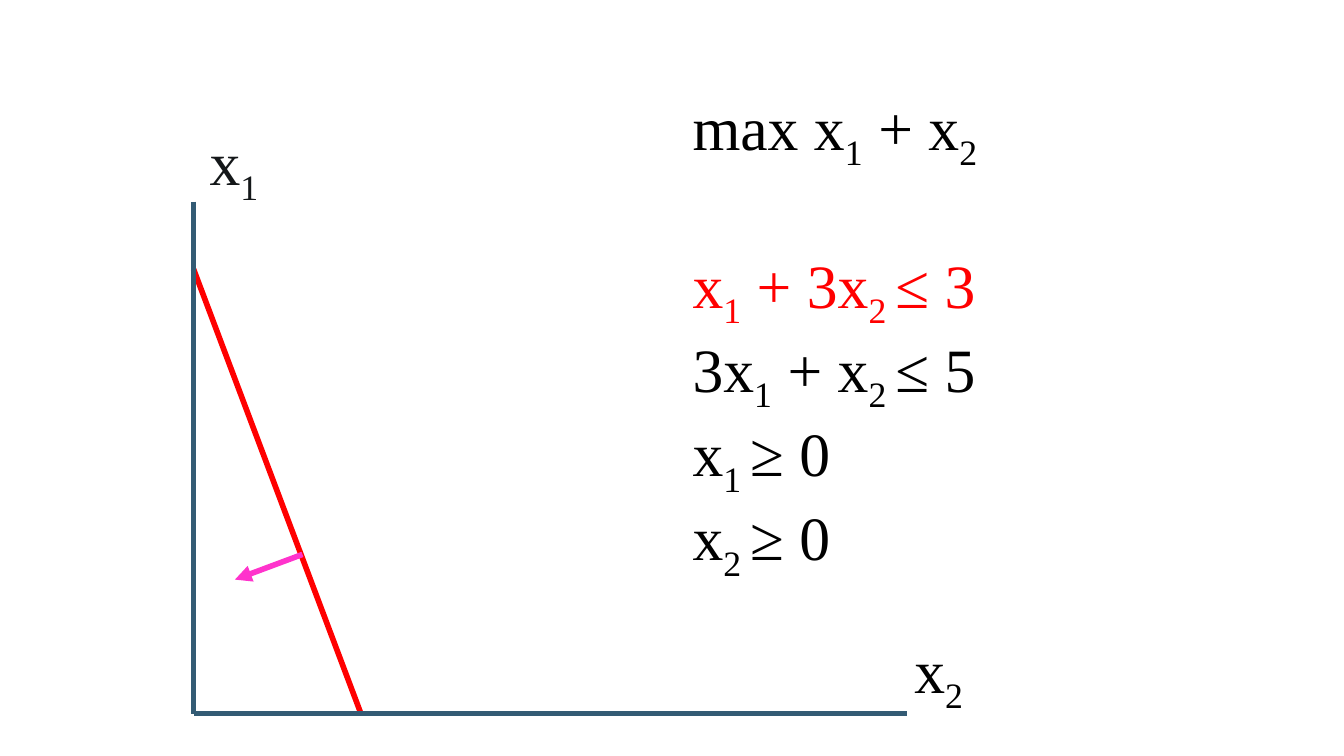
from lxml import etree
from pptx import Presentation
from pptx.dml.color import RGBColor
from pptx.enum.shapes import MSO_CONNECTOR
from pptx.enum.text import MSO_AUTO_SIZE, PP_ALIGN
from pptx.oxml.ns import qn
from pptx.util import Inches, Pt

BLACK = RGBColor(0x00, 0x00, 0x00)
CHARCOAL = RGBColor(0x14, 0x17, 0x19)
RED = RGBColor(0xFF, 0x00, 0x00)
PINK = RGBColor(0xFF, 0x33, 0xCC)
TEAL = RGBColor(0x33, 0x5B, 0x74)

FONT = "Times New Roman"
GROUP_GAP = 53  # points between the objective and its constraints

# Formula, colour, space before; the parts between bars alternate with subscripts
PROGRAM = [
    ("max x|1| + x|2", BLACK, 0),
    ("x|1| + 3x|2 |≤ 3", RED, GROUP_GAP),
    ("3x|1| + x|2 |≤ 5", BLACK, 0),
    ("x|1 |≥ 0", BLACK, 0),
    ("x|2 |≥ 0", BLACK, 0),
]


def add_formula(p, formula, color):
    """Write a formula whose every second part, split at the bars, is a subscript."""
    for i, part in enumerate(formula.split("|")):
        r = p.add_run()
        r.text = part
        for name, value in {"name": FONT, "size": Pt(44)}.items():
            setattr(r.font, name, value)
        r.font.color.rgb = color
        if i % 2:
            r._r.get_or_add_rPr().set("baseline", "-25000")


def add_formulas(s, left, top, width, height, lines):
    tf = s.shapes.add_textbox(
        Inches(left), Inches(top), Inches(width), Inches(height)).text_frame
    tf.word_wrap = False
    tf.auto_size = MSO_AUTO_SIZE.SHAPE_TO_FIT_TEXT
    for i, (formula, color, gap) in enumerate(lines):
        p = tf.add_paragraph() if i else tf.paragraphs[0]
        p.alignment = PP_ALIGN.LEFT
        if gap:
            p.space_before = Pt(gap)
        add_formula(p, formula, color)


def add_line(s, start, end, color, arrow=False):
    line = s.shapes.add_connector(
        MSO_CONNECTOR.STRAIGHT, *(Inches(v) for v in (*start, *end)))
    line.line.color.rgb = color
    line.line.width = Pt(4)
    if arrow:
        etree.SubElement(line.line._get_or_add_ln(), qn("a:tailEnd"), type="triangle")
    etree.SubElement(line._element.spPr, qn("a:effectLst"))


def add_graph(s, left, top, width, height):
    """Draw the axes along the left and bottom of the box, and the first constraint."""
    right, bottom = left + width, top + height
    origin = (left, bottom)
    add_formulas(s, left + 0.06, top - 0.82, 0.73, 0.84, [("x|1", CHARCOAL, 0)])
    add_formulas(s, right - 0.03, bottom - 0.86, 0.73, 0.84, [("x|2", BLACK, 0)])
    add_line(s, (left, top + 0.67), (left + 1.66, bottom), RED)
    add_line(s, (left + 1.08, bottom - 1.58), (left + 0.41, bottom - 1.33), PINK, arrow=True)
    add_line(s, (left, top), origin, TEAL)
    add_line(s, origin, (right, bottom), TEAL)


def main():
    prs = Presentation()
    prs.slide_width, prs.slide_height = Inches(13.33), Inches(7.5)
    s = prs.slides.add_slide(prs.slide_layouts[6])
    add_formulas(s, 6.77, 0.83, 3.35, 4.54, PROGRAM)
    add_graph(s, 1.92, 2, 7.08, 5.08)
    prs.save("out.pptx")


if __name__ == "__main__":
    main()
